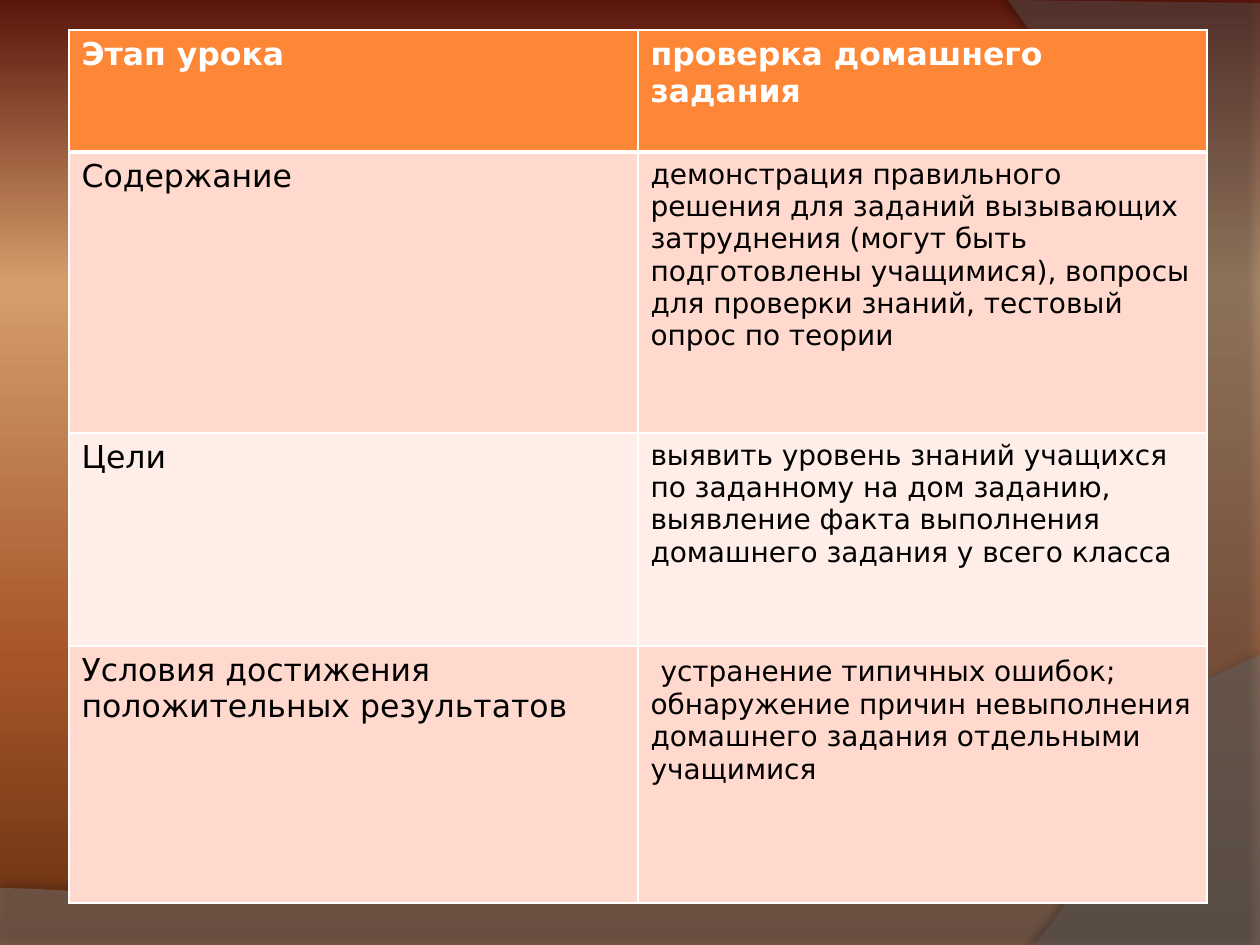
from dataclasses import dataclass

from lxml import etree
from pptx import Presentation
from pptx import util as u
from pptx.dml.color import RGBColor
from pptx.oxml import ns

PX = 914400 / 126
FONT = "DejaVu Sans"
Point = tuple[int, int]


@dataclass
class Run:
    wording: str
    size: int


@dataclass
class Row:
    height: int
    fill: str
    color: str
    cells: list[list[Run]]
    bold: bool = False


@dataclass
class Panel:
    corners: list[Point]
    curve: list[Point]
    color: str
    opacity: int
    shadow_opacity: int
    shadow_distance: float
    shadow_angle: int


PANELS = [
    Panel([(0, 946), (1260, 946)], [(1260, 655), (704, 919), (493, 906), (0, 888)],
          "7F7F7F", 45, 35, 3.5, 270),
    Panel([(1260, 3), (1260, 945)], [(1034, 945), (1178, 780), (1283, 378), (1008, 0)],
          "5E5E5E", 40, 45, 4, 180),
]

ROWS = [
    Row(122, "FE8637", "FFFFFF",
        [[Run("Этап урока", 18)], [Run("проверка домашнего задания", 18)]], True),
    Row(281, "FFD9CE", "000000",
        [[Run("Содержание", 18)],
         [Run("демонстрация правильного решения для заданий вызывающих затруднения "
              "(могут быть подготовлены учащимися), вопросы для проверки знаний, "
              "тестовый опрос по теории", 16)]]),
    Row(213, "FFEDE8", "000000",
        [[Run("Цели", 18)],
         [Run("выявить уровень знаний учащихся по заданному на дом заданию, "
              "выявление факта выполнения домашнего задания у всего класса", 16)]]),
    Row(257, "FFD9CE", "000000",
        [[Run("Условия достижения положительных результатов", 18)],
         [Run(" ", 18),
          Run("устранение типичных ошибок; обнаружение причин невыполнения "
              "домашнего задания отдельными учащимися", 16)]]),
]


def px(length: int) -> u.Emu:
    return u.Emu(round(length * PX))


def rgb(color: str) -> RGBColor:
    return RGBColor.from_string(color)


def add_node(parent, tag: str, **attributes):
    node = etree.SubElement(parent, ns.qn(tag))
    for key, value in attributes.items():
        node.set(key, str(value))
    return node


def paint_background(slide, stops: list[tuple[int, str]]) -> None:
    fill = slide.background.fill
    fill.gradient()
    fill.gradient_angle = 270
    stop_list = next(slide.element.iter(ns.qn("a:gsLst")))
    for stop in list(stop_list):
        stop_list.remove(stop)
    for position, color in stops:
        stop = add_node(stop_list, "a:gs", pos=position * 1000)
        add_node(stop, "a:srgbClr", val=color)


def bezier(curve: list[Point], steps: int = 40) -> list[tuple[float, float]]:
    points = []
    for step in range(steps + 1):
        t = step / steps
        weights = ((1 - t) ** 3, 3 * t * (1 - t) ** 2, 3 * t * t * (1 - t), t ** 3)
        points.append(tuple(sum(w * p[axis] for w, p in zip(weights, curve))
                            for axis in (0, 1)))
    return points


def draw_panel(slide, panel: Panel) -> None:
    start, *corners = panel.corners
    builder = slide.shapes.build_freeform(*start, scale=PX)
    builder.add_line_segments(corners + bezier(panel.curve), close=True)
    shape = builder.convert_to_shape()
    shape.fill.solid()
    shape.fill.fore_color.rgb = rgb(panel.color)
    shape.line.fill.background()
    shape.shadow.inherit = False
    properties = shape.element.spPr
    fill_color = properties.find(ns.qn("a:solidFill"))[0]
    add_node(fill_color, "a:alpha", val=panel.opacity * 1000)
    shadow = add_node(properties.find(ns.qn("a:effectLst")), "a:outerShdw",
                      blurRad=u.Pt(4), dist=u.Pt(panel.shadow_distance),
                      dir=panel.shadow_angle * 60000, rotWithShape=0)
    shadow_color = add_node(shadow, "a:srgbClr", val="000000")
    add_node(shadow_color, "a:alpha", val=panel.shadow_opacity * 1000)


def draw_borders(cell, top: int, bottom: int) -> None:
    properties = cell._tc.get_or_add_tcPr()
    for side, width in (("L", 1), ("R", 1), ("T", top), ("B", bottom)):
        line = add_node(properties, f"a:ln{side}", w=u.Pt(width))
        add_node(add_node(line, "a:solidFill"), "a:srgbClr", val="FFFFFF")


def draw_cell(cell, row: Row, runs: list[Run]) -> None:
    cell.fill.solid()
    cell.fill.fore_color.rgb = rgb(row.fill)
    paragraph = cell.text_frame.paragraphs[0]
    for part in runs:
        run = paragraph.add_run()
        run.text = part.wording
        run.font.name = FONT
        run.font.size = u.Pt(part.size)
        run.font.bold = row.bold
        run.font.color.rgb = rgb(row.color)


def draw_table(slide, rows: list[Row], left: int, top: int, column: int) -> None:
    columns = len(rows[0].cells)
    height = sum(row.height for row in rows)
    table = slide.shapes.add_table(len(rows), columns, px(left), px(top),
                                   px(column * columns), px(height)).table
    table.horz_banding = False
    for lesson_column in table.columns:
        lesson_column.width = px(column)
    for index, row in enumerate(rows):
        table.rows[index].height = px(row.height)
        for cell, runs in zip(table.rows[index].cells, row.cells):
            draw_borders(cell, 3 if index == 1 else 1, 3 if index == 0 else 1)
            draw_cell(cell, row, runs)


def main() -> None:
    deck = Presentation()
    deck.slide_width, deck.slide_height = px(1260), px(945)
    slide = deck.slides.add_slide(deck.slide_layouts[6])
    paint_background(slide, [(0, "5A160B"), (30, "D49E6C"), (70, "A65528"), (100, "663012")])
    for panel in PANELS:
        draw_panel(slide, panel)
    draw_table(slide, ROWS, left=69, top=30, column=569)
    deck.save("out.pptx")


if __name__ == "__main__":
    main()
